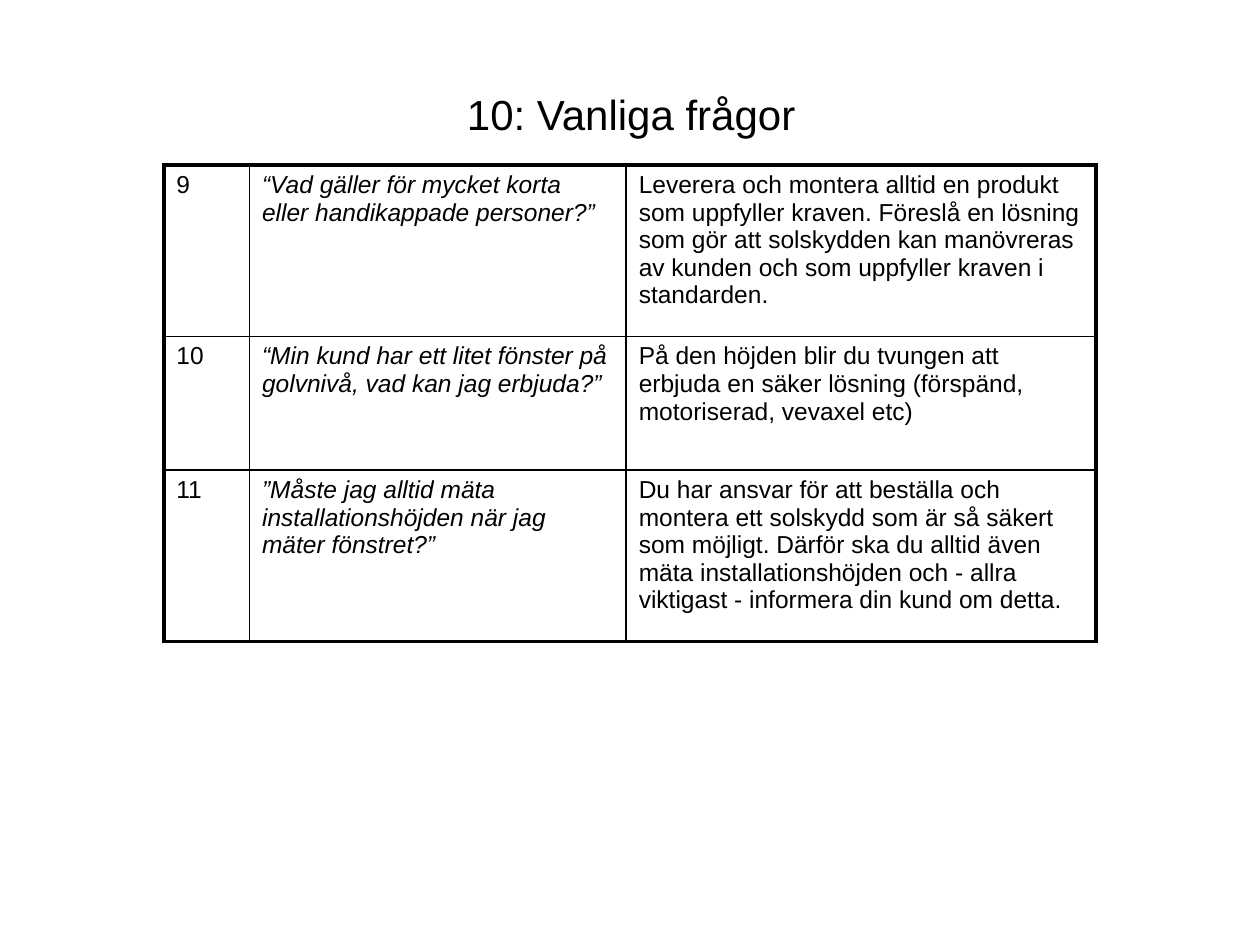
from typing import NamedTuple

from lxml.etree import SubElement
from pptx import Presentation
from pptx.dml.color import RGBColor
from pptx.enum.text import MSO_ANCHOR as Anchor, PP_ALIGN as Align
from pptx.oxml.ns import qn
from pptx.util import Inches, Pt

BLACK = "000000"
THICK, THIN = Pt(2.25), Pt(1)
COLUMN_WIDTHS = (0.68, 2.99, 3.73)
ROW_HEIGHTS = (1.36, 1.06, 1.36)


class Faq(NamedTuple):
    number: str
    question: str
    answer: str


FAQS = (
    Faq("9", "“Vad gäller för mycket korta eller handikappade personer?”",
        "Leverera och montera alltid en produkt som uppfyller kraven. "
        "Föreslå en lösning som gör att solskydden kan manövreras av kunden "
        "och som uppfyller kraven i standarden."),
    Faq("10", "“Min kund har ett litet fönster på golvnivå, vad kan jag erbjuda?”",
        "På den höjden blir du tvungen att erbjuda en säker lösning "
        "(förspänd, motoriserad, vevaxel etc)"),
    Faq("11", "”Måste jag alltid mäta installationshöjden när jag mäter fönstret?”",
        "Du har ansvar för att beställa och montera ett solskydd som är så "
        "säkert som möjligt. Därför ska du alltid även mäta "
        "installationshöjden och - allra viktigast - informera din kund om detta."),
)


def color(value: str) -> RGBColor:
    return RGBColor.from_string(value)


def write(frame, text: str, align=Align.LEFT, **formats) -> None:
    para = frame.paragraphs[0]
    para.alignment = align
    span = para.add_run()
    span.text = text
    span.font.color.rgb = color(BLACK)
    for name, value in {"name": "Arial", **formats}.items():
        setattr(span.font, name, value)


def set_borders(cell, widths: dict) -> None:
    """Put the border lines ahead of the fill, as the schema asks."""
    properties = cell._tc.get_or_add_tcPr()
    for index, (side, width) in enumerate(widths.items()):
        line = SubElement(properties, qn(f"a:ln{side}"), w=str(width))
        fill = SubElement(line, qn("a:solidFill"))
        SubElement(fill, qn("a:srgbClr"), val=BLACK)
        properties.insert(index, line)


def add_title(page, text: str) -> None:
    box = page.shapes.add_textbox(Inches(0.51), Inches(0.28), Inches(9), Inches(1.25))
    frame = box.text_frame
    frame.word_wrap = True
    frame.vertical_anchor = Anchor.MIDDLE
    write(frame, text, Align.CENTER, size=Pt(24))


def add_faq_table(page, faqs: tuple[Faq, ...]) -> None:
    table = page.shapes.add_table(
        len(faqs), len(COLUMN_WIDTHS), Inches(1.3), Inches(1.31),
        Inches(sum(COLUMN_WIDTHS)), Inches(sum(ROW_HEIGHTS))).table
    table.first_row = table.horz_banding = False
    for column, width in zip(table.columns, COLUMN_WIDTHS):
        column.width = Inches(width)
    for row, height in zip(table.rows, ROW_HEIGHTS):
        row.height = Inches(height)

    last_row, last_column = len(faqs) - 1, len(COLUMN_WIDTHS) - 1
    for r, faq in enumerate(faqs):
        for c, text in enumerate(faq):
            cell = table.cell(r, c)
            cell.fill.background()
            write(cell.text_frame, text, size=Pt(14), italic=text == faq.question)
            # Thick outer frame, thin inner lines
            outer = {"L": c == 0, "R": c == last_column, "T": r == 0, "B": r == last_row}
            set_borders(cell, {side: THICK if edge else THIN for side, edge in outer.items()})


def main() -> None:
    deck = Presentation()
    deck.slide_width, deck.slide_height = Inches(10), Inches(7.5)
    page = deck.slides.add_slide(deck.slide_layouts[6])
    add_title(page, "10: Vanliga frågor")
    add_faq_table(page, FAQS)
    deck.save("out.pptx")


if __name__ == "__main__":
    main()
